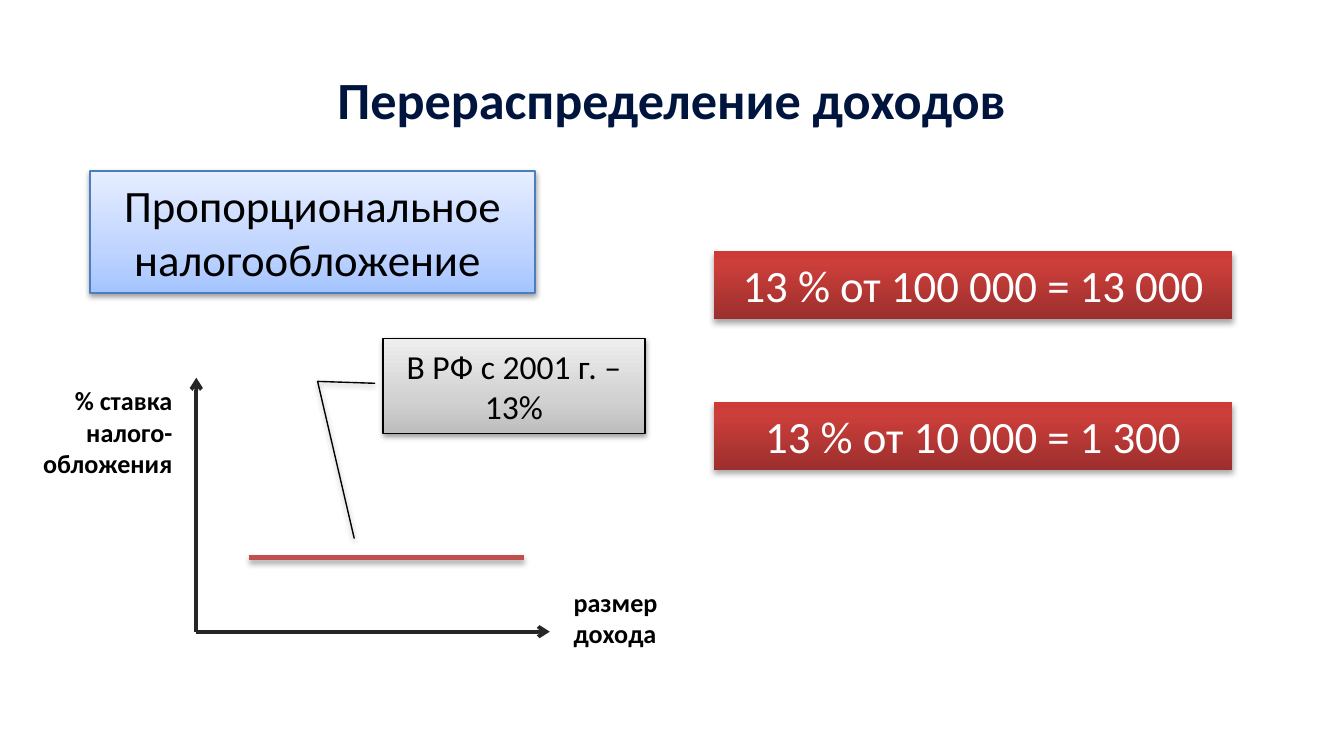
"""Build a slide that explains proportional taxation."""
import dataclasses

import pptx
import pptx.dml.color
import pptx.enum.shapes
import pptx.enum.text
import pptx.oxml
import pptx.oxml.ns
import pptx.util

Cm = pptx.util.Cm
Pt = pptx.util.Pt
Shape = pptx.enum.shapes.MSO_SHAPE
Align = pptx.enum.text.PP_ALIGN
Anchor = pptx.enum.text.MSO_ANCHOR
AutoSize = pptx.enum.text.MSO_AUTO_SIZE
NAMESPACE = pptx.oxml.ns.nsdecls("a")


@dataclasses.dataclass(frozen=True)
class Theme:
    """Colours, gradients and type sizes of the slide."""

    font: str = "Calibri"
    heading: str = "00153E"
    text: str = "000000"
    light: str = "FFFFFF"
    axis: str = "262626"
    rate: str = "C0504D"
    border: str = "4B7EBC"
    blue: tuple = ((0, "A4C4FF"), (35, "BFD4FF"), (100, "E6EEFF"))
    red: tuple = ((0, "9C2F2D"), (80, "CB3E3A"), (100, "CE3B37"))
    grey: tuple = ((0, "BDBDBD"), (35, "D1D1D1"), (100, "EEEEEE"))
    title_size: float = 28
    box_size: float = 24
    note_size: float = 18
    label_size: float = 14


THEME = Theme()


def rgb(color):
    """Return the colour object for a hex value."""
    return pptx.dml.color.RGBColor.from_string(color)


def write(shape, text, size, color=THEME.text, align=Align.CENTER, bold=False,
          anchor=Anchor.TOP, auto_size=AutoSize.SHAPE_TO_FIT_TEXT):
    """Put one formatted paragraph into a shape."""
    frame = shape.text_frame
    frame.text = text
    layout = {
        "word_wrap": True, "auto_size": auto_size, "vertical_anchor": anchor,
        "margin_left": Cm(0.25), "margin_right": Cm(0.25),
        "margin_top": Cm(0.13), "margin_bottom": Cm(0.13),
    }
    for name, value in layout.items():
        setattr(frame, name, value)
    paragraph = frame.paragraphs[0]
    paragraph.alignment = align
    font = paragraph.runs[0].font
    for name, value in {"name": THEME.font, "size": Pt(size), "bold": bold}.items():
        setattr(font, name, value)
    font.color.rgb = rgb(color)


def add_effects(properties, opacity=None, distance=1.8):
    """Append an effect list, with a downward shadow if opacity is given."""
    shadow = ""
    if opacity:
        shadow = (
            f'<a:outerShdw blurRad="{Pt(3.1)}" dist="{Pt(distance)}" dir="5400000" '
            f'rotWithShape="0"><a:srgbClr val="{THEME.text}">'
            f'<a:alpha val="{opacity * 1000}"/></a:srgbClr></a:outerShdw>'
        )
    properties.append(pptx.oxml.parse_xml(
        f"<a:effectLst {NAMESPACE}>{shadow}</a:effectLst>"))


def fill_gradient(shape, stops):
    """Fill a shape with a gradient that runs from bottom to top."""
    shape.fill.gradient()
    shape.fill.gradient_angle = 90
    items = "".join(
        f'<a:gs pos="{position * 1000}"><a:srgbClr val="{color}"/></a:gs>'
        for position, color in stops
    )
    old = shape.element.spPr.find(".//" + pptx.oxml.ns.qn("a:gsLst"))
    new = pptx.oxml.parse_xml(f"<a:gsLst {NAMESPACE}>{items}</a:gsLst>")
    old.getparent().replace(old, new)


def add_box(shapes, kind, bounds, stops, border=None):
    """Add a gradient box with a soft shadow and an optional border."""
    shape = shapes.add_shape(kind, *map(Cm, bounds))
    fill_gradient(shape, stops)
    if border:
        shape.line.color.rgb = rgb(border)
        shape.line.width = Pt(0.75)
        add_effects(shape.element.spPr, 38, 1.6)
    else:
        shape.line.fill.background()
        add_effects(shape.element.spPr, 35)
    return shape


def add_line(shapes, start, end, color, width, arrow=False, shadow=None):
    """Add a straight line, optionally with an arrowhead or a shadow."""
    line = shapes.add_connector(
        pptx.enum.shapes.MSO_CONNECTOR.STRAIGHT, *map(Cm, (*start, *end)))
    line.line.color.rgb = rgb(color)
    line.line.width = Pt(width)
    properties = line.element.spPr
    if arrow:
        properties.find(pptx.oxml.ns.qn("a:ln")).append(
            pptx.oxml.parse_xml(f'<a:tailEnd {NAMESPACE} type="arrow"/>'))
    add_effects(properties, shadow)


def add_label(shapes, bounds, text, align):
    """Add a bold axis label."""
    label = shapes.add_textbox(*map(Cm, bounds))
    write(label, text, THEME.label_size, align=align, bold=True)


def add_title(slide, text):
    """Place and format the title placeholder."""
    title = slide.shapes.title
    bounds = {"left": 2.69, "top": 1.14, "width": 20, "height": 1.45}
    for name, value in bounds.items():
        setattr(title, name, Cm(value))
    write(title, text, THEME.title_size, THEME.heading, bold=True)


def add_rate_diagram(slide):
    """Draw the axes, the flat tax rate and its callout as one group."""
    shapes = slide.shapes.add_group_shape().shapes
    origin = (3.71, 11.94)
    for end in ((origin[0], 7.14), (10.39, origin[1])):
        add_line(shapes, origin, end, THEME.axis, 2, arrow=True)
    add_label(shapes, (0.51, 7.14, 3, 2.06), "% ставка налого-обложения", Align.RIGHT)
    add_label(shapes, (10.59, 10.95, 2.14, 1.45), "размер дохода", Align.LEFT)
    add_line(shapes, (4.7, 10.54), (9.91, 10.54), THEME.rate, 3, shadow=35)
    callout = add_box(shapes, Shape.LINE_CALLOUT_2, (7.24, 6.4, 4.95, 1.8),
                      THEME.grey, THEME.text)
    for index, value in enumerate((0.47, -0.03, 0.45, -0.25, 2.1, -0.11)):
        callout.adjustments[index] = value
    write(callout, "В РФ с 2001 г. – 13%", THEME.note_size,
          anchor=Anchor.MIDDLE, auto_size=AutoSize.NONE)


def add_examples(slide, texts):
    """Stack the worked examples at equal steps."""
    for index, text in enumerate(texts):
        box = add_box(slide.shapes, Shape.RECTANGLE,
                      (13.49, 4.75 + 2.85 * index, 9.8, 1.28), THEME.red)
        write(box, text, THEME.box_size, THEME.light)


def main():
    """Build and save the presentation."""
    presentation = pptx.Presentation()
    presentation.slide_width = Cm(25.4)
    presentation.slide_height = Cm(14.29)
    slide = presentation.slides.add_slide(presentation.slide_layouts[5])
    add_rate_diagram(slide)
    add_title(slide, "Перераспределение доходов")
    topic = add_box(slide.shapes, Shape.RECTANGLE, (1.7, 3.23, 8.41, 2.31),
                    THEME.blue, THEME.border)
    write(topic, "Пропорциональное налогообложение ", THEME.box_size)
    add_examples(slide, ("13 % от 100 000 = 13 000", "13 % от 10 000 = 1 300"))
    presentation.save("out.pptx")


if __name__ == "__main__":
    main()
